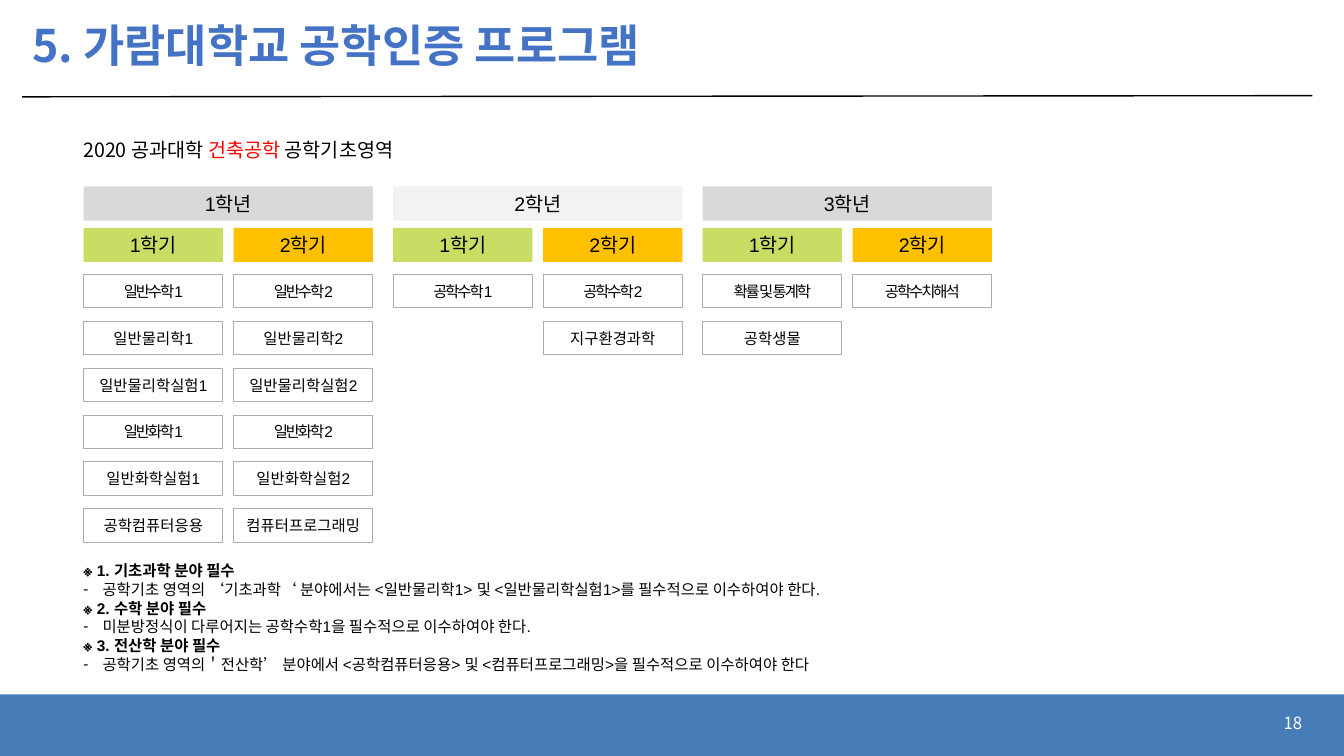
"""Builds the slide on the foundation courses of the engineering accreditation programme."""
from dataclasses import dataclass

import pptx
import pptx.dml.color
import pptx.enum.shapes
import pptx.enum.text
import pptx.oxml
import pptx.oxml.ns
import pptx.util
from lxml import etree

Cm = pptx.util.Cm
Pt = pptx.util.Pt
ANCHOR = pptx.enum.text.MSO_ANCHOR
ALIGN = pptx.enum.text.PP_ALIGN

TITLE = "5. 가람대학교 공학인증 프로그램"
SUBTITLE = ("2020 공과대학 ", "건축공학 ", "공학기초영역")
YEARS = [
    ("1학년", [
        ["일반수학1", "일반물리학1", "일반물리학실험1", "일반화학1", "일반화학실험1", "공학컴퓨터응용"],
        ["일반수학2", "일반물리학2", "일반물리학실험2", "일반화학2", "일반화학실험2", "컴퓨터프로그래밍"],
    ]),
    ("2학년", [["공학수학1"], ["공학수학2", "지구환경과학"]]),
    ("3학년", [["확률 및 통계학", "공학생물"], ["공학수치해석"]]),
]
SEMESTERS = ("1학기", "2학기")
TIGHT_ROWS = (0, 3)
NOTES = [
    ("※ 1. 기초과학 분야 필수",
     "공학기초 영역의 ‘기초과학‘ 분야에서는 <일반물리학1> 및 <일반물리학실험1>를 필수적으로 이수하여야 한다."),
    ("※ 2. 수학 분야 필수",
     "미분방정식이 다루어지는 공학수학1을 필수적으로 이수하여야 한다."),
    ("※ 3. 전산학 분야 필수",
     "공학기초 영역의＇전산학’ 분야에서 <공학컴퓨터응용> 및 <컴퓨터프로그래밍>을 필수적으로 이수하여야 한다"),
]


@dataclass(frozen=True)
class Theme:
    """Colours, fonts and type sizes."""
    title: str = "4472C4"
    footer: str = "467DB9"
    accent: str = "FF0000"
    text: str = "000000"
    white: str = "FFFFFF"
    border: str = "AFABAB"
    years: tuple = ("D9D9D9", "F2F2F2", "D9D9D9")
    semesters: tuple = ("CADC63", "FFC000")
    korean_font: str = "Noto Sans CJK KR"
    latin_font: str = "Arial"
    title_size: int = 32
    heading_size: int = 14
    number_size: int = 12
    body_size: int = 11


THEME = Theme()


def color(value):
    """Turn a hex string into a colour."""
    return pptx.dml.color.RGBColor.from_string(value)


def format_run(run, size, value=THEME.text, font=THEME.latin_font, bold=False):
    """Set size, colour, weight and both typefaces of a run."""
    run.font.size = Pt(size)
    run.font.bold = bold
    run.font.name = font
    run.font.color.rgb = color(value)
    east_asian = etree.SubElement(run.font._element, pptx.oxml.ns.qn("a:ea"))
    east_asian.set("typeface", THEME.korean_font)


def place(shape, left, top, width, height):
    """Move and size a shape in centimetres."""
    shape.left, shape.top, shape.width, shape.height = map(Cm, (left, top, width, height))


def add_box(slide, box, fill=None, line=None, text="", size=THEME.body_size, spacing=0):
    """Add a flat rectangle with centred text."""
    shape = slide.shapes.add_shape(pptx.enum.shapes.MSO_SHAPE.RECTANGLE, *map(Cm, box))
    shape.shadow.inherit = False
    if fill:
        shape.fill.solid()
        shape.fill.fore_color.rgb = color(fill)
    else:
        shape.fill.background()
    if line:
        shape.line.color.rgb = color(line)
        shape.line.width = Pt(0.75)
    else:
        shape.line.fill.background()
    if text:
        frame = shape.text_frame
        frame.margin_left = frame.margin_right = Cm(0.03)
        frame.vertical_anchor = ANCHOR.MIDDLE
        frame.word_wrap = False
        frame.text = text
        paragraph = frame.paragraphs[0]
        paragraph.alignment = ALIGN.CENTER
        format_run(paragraph.runs[0], size)
        if spacing:
            paragraph.runs[0].font._element.set("spc", str(spacing))


def add_header(slide):
    """Add the title, its rule, the subtitle and the footer."""
    title = slide.shapes.title
    place(title, 0.56, 0.25, 32.54, 1.9)
    title.text_frame.text = TITLE
    title.text_frame.vertical_anchor = ANCHOR.MIDDLE
    paragraph = title.text_frame.paragraphs[0]
    paragraph.alignment = ALIGN.LEFT
    paragraph.line_spacing = 0.9
    format_run(paragraph.runs[0], THEME.title_size, THEME.title, THEME.korean_font, True)

    rule = slide.shapes.add_connector(
        pptx.enum.shapes.MSO_CONNECTOR.STRAIGHT, Cm(0.56), Cm(2.44), Cm(33.07), Cm(2.41))
    rule.line.color.rgb = color(THEME.text)
    rule.line.width = Pt(1)
    etree.SubElement(rule._element.spPr, pptx.oxml.ns.qn("a:effectLst"))

    subtitle = slide.shapes.add_textbox(Cm(1.85), Cm(3.35), Cm(11.35), Cm(0.86))
    subtitle.text_frame.word_wrap = True
    for text, value in zip(SUBTITLE, (THEME.text, THEME.accent, THEME.text)):
        run = subtitle.text_frame.paragraphs[0].add_run()
        run.text = text
        format_run(run, THEME.heading_size, value, THEME.korean_font)

    add_box(slide, (0, 17.5, 33.87, 1.55), THEME.footer)
    number = slide.shapes.add_textbox(Cm(25.45), Cm(17.7), Cm(7.62), Cm(1.02))
    number.text_frame.word_wrap = True
    number.text_frame.vertical_anchor = ANCHOR.MIDDLE
    number.text_frame.text = "18"
    number.text_frame.paragraphs[0].alignment = ALIGN.RIGHT
    format_run(number.text_frame.paragraphs[0].runs[0], THEME.number_size,
               THEME.white, THEME.korean_font)


def add_courses(slide):
    """Add year and semester headings with the course boxes below them."""
    left, year_pitch, semester_pitch, row_pitch = 2.11, 7.8, 3.78, 1.18
    width, heading_height, course_height = 3.51, 0.86, 0.84
    for year, (year_name, semesters) in enumerate(YEARS):
        year_left = left + year * year_pitch
        add_box(slide, (year_left, 4.7, semester_pitch + width, heading_height),
                THEME.years[year], text=year_name, size=THEME.heading_size)
        for semester, courses in enumerate(semesters):
            column_left = year_left + semester * semester_pitch
            add_box(slide, (column_left, 5.74, width, heading_height),
                    THEME.semesters[semester], text=SEMESTERS[semester], size=THEME.heading_size)
            for row, course in enumerate(courses):
                add_box(slide, (column_left, 6.92 + row * row_pitch, width, course_height),
                        line=THEME.border, text=course,
                        spacing=-150 if row in TIGHT_ROWS else 0)


def add_notes_list(slide):
    """Fill the body placeholder with the required fields."""
    body = slide.placeholders[1]
    place(body, 1.85, 14.02, 29.31, 3.4)
    frame = body.text_frame
    frame.auto_size = pptx.enum.text.MSO_AUTO_SIZE.NONE
    frame.vertical_anchor = ANCHOR.TOP
    lines = [line for note in NOTES for line in note]
    frame.text = "\n".join(lines)
    for index, paragraph in enumerate(frame.paragraphs):
        is_heading = index % 2 == 0
        paragraph.alignment = ALIGN.JUSTIFY
        paragraph.space_before = Pt(0)
        paragraph.line_spacing = Pt(13.3)
        format_run(paragraph.runs[0], THEME.body_size, bold=is_heading)
        properties = paragraph._element.get_or_add_pPr()
        indent = 0 if is_heading else Cm(0.48)
        properties.set("marL", str(indent))
        properties.set("indent", str(-indent))
        if is_heading:
            etree.SubElement(properties, pptx.oxml.ns.qn("a:buNone"))
        else:
            etree.SubElement(properties, pptx.oxml.ns.qn("a:buFont")).set("typeface", THEME.latin_font)
            etree.SubElement(properties, pptx.oxml.ns.qn("a:buChar")).set("char", "-")


def main():
    """Build and save the slide."""
    presentation = pptx.Presentation()
    presentation.slide_width, presentation.slide_height = Cm(33.87), Cm(19.05)
    slide = presentation.slides.add_slide(presentation.slide_layouts[1])
    add_header(slide)
    add_courses(slide)
    add_notes_list(slide)
    presentation.save("out.pptx")


if __name__ == "__main__":
    main()
